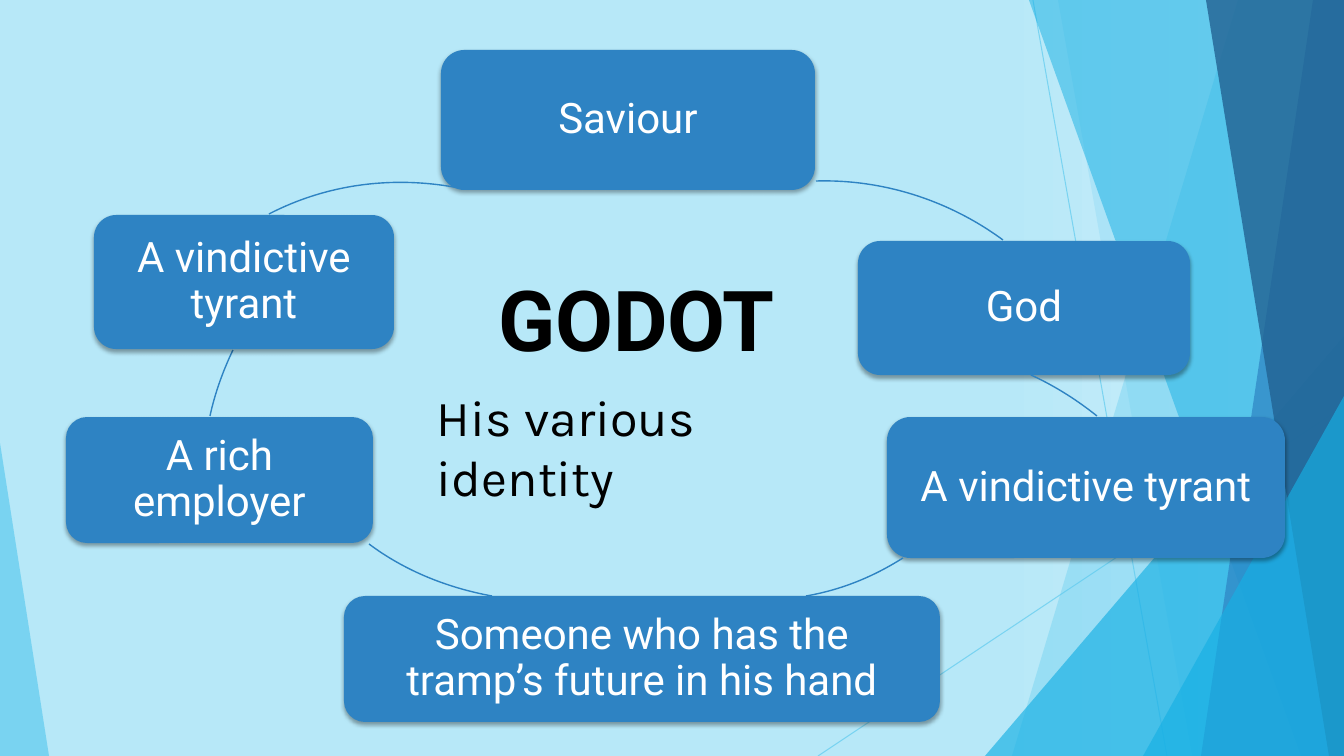
from lxml.etree import SubElement
from pptx import Presentation
from pptx.dml.color import RGBColor
from pptx.enum.shapes import MSO_CONNECTOR, MSO_SHAPE
from pptx.enum.text import MSO_ANCHOR, MSO_AUTO_SIZE, PP_ALIGN
from pptx.oxml.ns import qn
from pptx.util import Pt

WIDTH, HEIGHT = 1344, 756
SCALE = 12192000 / WIDTH
RING = 595

COLORS = {
    "pale": "B7E8F8", "paler": "CFEFFA", "sky": "5FCBEF", "cyan": "17B0E4",
    "blue": "2E83C3", "navy": "226292", "white": "FFFFFF", "black": "000000",
}

TITLE = ("GODOT", (488, 262, 357, 112), "Roboto", 60, True)
SUBTITLE = ("His various identity", (427, 381, 431, 72), "Karla", 36, False)

RAYS = [(1033, 0, 1167, HEIGHT), (WIDTH, 406, 818, HEIGHT)]

FACETS = [
    ("band", (1238, 1012), "sky", 36),
    ("band", (1058, 1192), "sky", 20),
    ("triangle", (985, 336, 359, 420, 1), "cyan", 66),
    ("band", (1029, 1301), "cyan", 50),
    ("band", (1313, 1201), "blue", 70),
    ("band", (1206, 1329), "navy", 80),
    ("triangle", (1143, 396, 201, 360, 1), "cyan", 66),
    ("triangle", (0, 443, 49, 313, 0), "sky", 70),
]

IDENTITIES = [
    ("Saviour", (441, 50, 374, 140)),
    ("God", (858, 241, 332, 134)),
    ("A vindictive tyrant", (887, 417, 398, 141)),
    ("Someone who has the tramp’s future in his hand", (344, 596, 596, 126)),
    ("A rich employer", (66, 417, 307, 126)),
    ("A vindictive tyrant", (94, 215, 300, 134)),
]

ARCS = [
    ((528, 181), [(816, 181), (884, 179), (950, 201), (1003, 240)]),
    ((609, 348), [(1031, 375), (1055, 386), (1077, 400), (1097, 416)]),
    ((451, 6), [(903, 558), (873, 577), (841, 590), (806, 596)]),
    ((246, 5), [(492, 596), (448, 588), (405, 571), (369, 544)]),
    ((203, 182), [(210, 416), (215, 393), (223, 371), (233, 350)]),
    ((104, 182), [(269, 214), (329, 183), (397, 175), (464, 189)]),
]


def px(*lengths):
    return [round(length * SCALE) for length in lengths]


def rgb(name):
    return RGBColor.from_string(COLORS[name])


def set_alpha(fill_parent, percent):
    color = fill_parent.find(".//" + qn("a:srgbClr"))
    SubElement(color, qn("a:alpha"), val=str(percent * 1000))


def place(shape, bounds):
    shape.left, shape.top, shape.width, shape.height = px(*bounds)


def paint(shape, color, alpha=100):
    shape.shadow.inherit = False
    shape.fill.solid()
    shape.fill.fore_color.rgb = rgb(color)
    shape.line.fill.background()
    if alpha < 100:
        set_alpha(shape._element.spPr, alpha)


def write(shape, wording, font, size, color, bold=False, align=PP_ALIGN.LEFT):
    frame = shape.text_frame
    frame.text = wording
    frame.word_wrap = True
    paragraph = frame.paragraphs[0]
    paragraph.alignment = align
    run = paragraph.runs[0]
    run.font.name = font
    run.font.size = Pt(size)
    run.font.bold = bold
    run.font.color.rgb = rgb(color)
    return frame


def draw_outline(slide, points, closed):
    corners = [px(*point) for point in points]
    builder = slide.shapes.build_freeform(*corners[0])
    builder.add_line_segments(corners[1:], close=closed)
    return builder.convert_to_shape()


def draw_background(slide):
    fill = slide.background.fill
    fill.gradient()
    fill.gradient_angle = 0
    for stop, position, color in zip(fill.gradient_stops, (0.74, 1), ("pale", "paler")):
        stop.position = position
        stop.color.rgb = rgb(color)
    for ends in RAYS:
        ray = slide.shapes.add_connector(MSO_CONNECTOR.STRAIGHT, *px(*ends))
        ray.line.color.rgb = rgb("sky")
        ray.line.width = Pt(0.75)
        set_alpha(ray._element.spPr, 70)
        SubElement(ray._element.spPr, qn("a:effectLst"))
    for kind, geometry, color, alpha in FACETS:
        if kind == "band":
            top, bottom = geometry
            points = [(top, 0), (WIDTH, 0), (WIDTH, HEIGHT), (bottom, HEIGHT)]
            facet = draw_outline(slide, points, True)
        else:
            *bounds, apex = geometry
            facet = slide.shapes.add_shape(MSO_SHAPE.ISOSCELES_TRIANGLE, *px(*bounds))
            facet.adjustments[0] = apex
        paint(facet, color, alpha)


def draw_identity(slide, wording, bounds):
    card = slide.shapes.add_shape(MSO_SHAPE.ROUNDED_RECTANGLE, *px(*bounds))
    paint(card, "blue")
    effects = card._element.spPr.find(qn("a:effectLst"))
    shadow = SubElement(effects, qn("a:outerShdw"), blurRad=str(Pt(3)),
                        dist=str(Pt(2)), dir="5400000", rotWithShape="0")
    SubElement(shadow, qn("a:srgbClr"), val=COLORS["black"])
    set_alpha(shadow, 35)
    frame = write(card, wording, "Roboto", 30, "white", align=PP_ALIGN.CENTER)
    frame.paragraphs[0].line_spacing = 0.9
    frame.vertical_anchor = MSO_ANCHOR.MIDDLE
    for side in ("left", "top", "right", "bottom"):
        setattr(frame, "margin_" + side, px(12)[0])


def draw_arc(slide, corner, controls):
    arc = draw_outline(slide, [controls[0], controls[-1]], False)
    place(arc, (*corner, RING, RING))
    outline = arc._element.spPr.find(".//" + qn("a:path"))
    for segment in list(outline):
        outline.remove(segment)
    for side in ("w", "h"):
        outline.set(side, str(px(RING)[0]))
    for tag, points in (("a:moveTo", controls[:1]), ("a:cubicBezTo", controls[1:])):
        segment = SubElement(outline, qn(tag))
        for point in points:
            x, y = px(point[0] - corner[0], point[1] - corner[1])
            SubElement(segment, qn("a:pt"), x=str(x), y=str(y))
    arc.shadow.inherit = False
    arc.fill.background()
    arc.line.color.rgb = rgb("blue")
    arc.line.width = Pt(1)


def draw_heading(shape, heading):
    wording, bounds, font, size, bold = heading
    place(shape, bounds)
    frame = write(shape, wording, font, size, "black", bold)
    frame.auto_size = MSO_AUTO_SIZE.NONE
    frame.vertical_anchor = MSO_ANCHOR.TOP


def main():
    deck = Presentation()
    deck.slide_width, deck.slide_height = px(WIDTH, HEIGHT)
    slide = deck.slides.add_slide(deck.slide_layouts[5])
    draw_background(slide)
    for identity, arc in zip(IDENTITIES, ARCS):
        draw_identity(slide, *identity)
        draw_arc(slide, *arc)
    draw_heading(slide.shapes.title, TITLE)
    draw_heading(slide.shapes.add_textbox(*px(*SUBTITLE[1])), SUBTITLE)
    deck.save("out.pptx")


if __name__ == "__main__":
    main()
